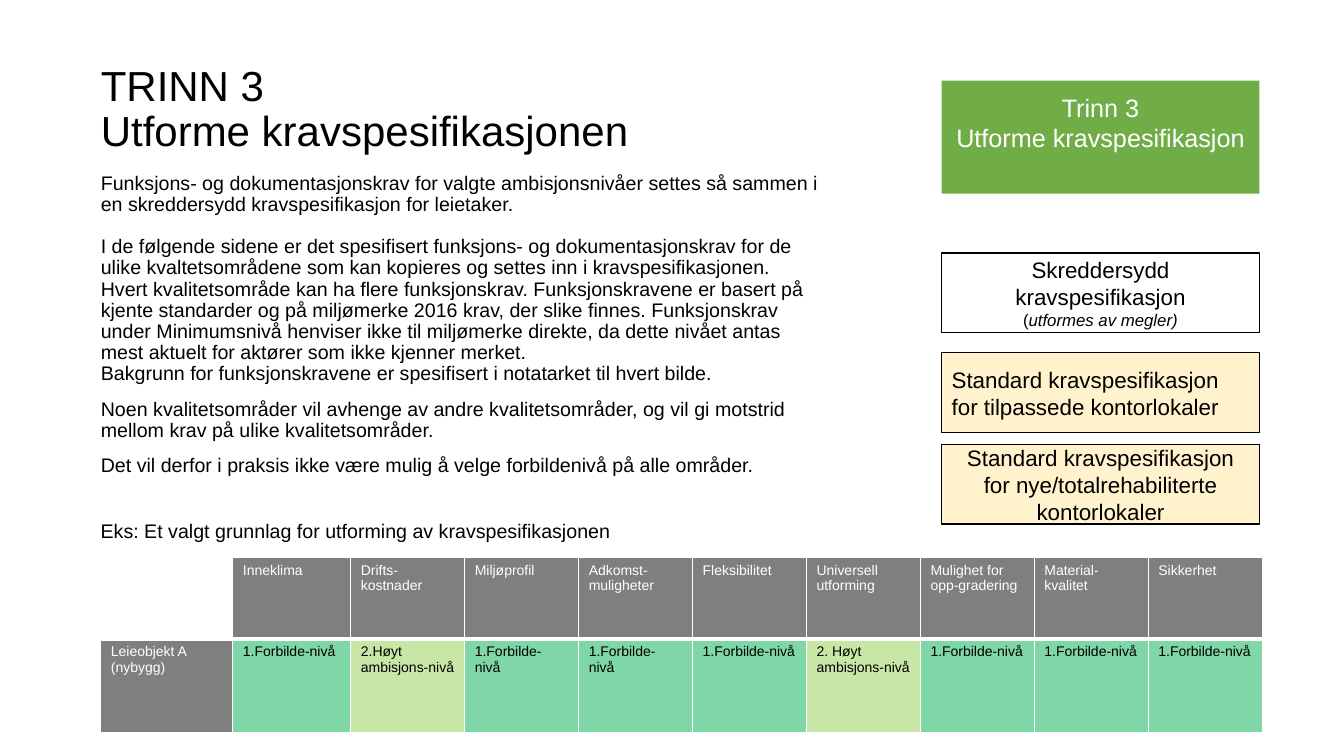
"""Build the slide about step 3, shaping the requirement specification."""
import pptx
import pptx.dml.color
import pptx.enum.shapes
import pptx.enum.text
import pptx.oxml.ns
import pptx.util
from lxml import etree

Inches = pptx.util.Inches
Pt = pptx.util.Pt
RGBColor = pptx.dml.color.RGBColor
ANCHOR = pptx.enum.text.MSO_ANCHOR
ALIGN = pptx.enum.text.PP_ALIGN
qn = pptx.oxml.ns.qn

BLACK = RGBColor(0x00, 0x00, 0x00)
WHITE = RGBColor(0xFF, 0xFF, 0xFF)
STEP_GREEN = RGBColor(0x70, 0xAD, 0x47)
CREAM = RGBColor(0xFF, 0xF2, 0xCC)
BEST_GREEN = RGBColor(0x00, 0xB1, 0x51)
HIGH_GREEN = RGBColor(0x92, 0xD0, 0x50)

BOX_LEFT, BOX_WIDTH, BOX_HEIGHT = 9.34, 3.15, 0.79

TITLE = ["TRINN 3", "Utforme kravspesifikasjonen"]
BODY = [
    ("Funksjons- og dokumentasjonskrav for valgte ambisjonsnivåer settes så sammen i "
     "en skreddersydd kravspesifikasjon for leietaker.", 0),
    ("I de følgende sidene er det spesifisert funksjons- og dokumentasjonskrav for de "
     "ulike kvaltetsområdene som kan kopieres og settes inn i kravspesifikasjonen. "
     "Hvert kvalitetsområde kan ha flere funksjonskrav. Funksjonskravene er basert på "
     "kjente standarder og på miljømerke 2016 krav, der slike finnes. Funksjonskrav "
     "under Minimumsnivå henviser ikke til miljømerke direkte, da dette nivået antas "
     "mest aktuelt for aktører som ikke kjenner merket.", 15),
    ("Bakgrunn for funksjonskravene er spesifisert i notatarket til hvert bilde.", 0),
    ("Noen kvalitetsområder vil avhenge av andre kvalitetsområder, og vil gi motstrid "
     "mellom krav på ulike kvalitetsområder.", 10),
    ("Det vil derfor i praksis ikke være mulig å velge forbildenivå på alle områder.", 10),
]
EXAMPLE = "Eks: Et valgt grunnlag for utforming av kravspesifikasjonen"
AREAS = [
    ("Inneklima", "1.Forbilde-nivå"),
    ("Drifts-kostnader", "2.Høyt ambisjons-nivå"),
    ("Miljøprofil", "1.Forbilde- nivå"),
    ("Adkomst-muligheter", "1.Forbilde- nivå"),
    ("Fleksibilitet", "1.Forbilde-nivå"),
    ("Universell utforming", "2. Høyt ambisjons-nivå"),
    ("Mulighet for opp-gradering", "1.Forbilde-nivå"),
    ("Material-kvalitet", "1.Forbilde-nivå"),
    ("Sikkerhet", "1.Forbilde-nivå"),
]


def apply_format(target, values):
    """Set every attribute named in values on target."""
    for name, value in values.items():
        setattr(target, name, value)


def add_span(para, text, size, color=BLACK, italic=False):
    """Append one formatted run to a paragraph."""
    span = para.add_run()
    span.text = text
    apply_format(span.font, {"name": "Arial", "size": Pt(size), "bold": False, "italic": italic})
    span.font.color.rgb = color


def add_para(frame, text, size, color=BLACK, **values):
    """Fill the first empty paragraph or append another one."""
    first = frame.paragraphs[0]
    para = frame.add_paragraph() if first.runs else first
    apply_format(para, values)
    add_span(para, text, size, color)
    return para


def place(shape, left, top, width, height):
    """Move and size a shape in inches."""
    apply_format(shape, {"left": Inches(left), "top": Inches(top),
                         "width": Inches(width), "height": Inches(height)})


def fill_title(page):
    """Write the heading in the title placeholder."""
    title = page.shapes.title
    place(title, 0.9, 0.37, 11.5, 1.45)
    apply_format(title.text_frame, {"vertical_anchor": ANCHOR.MIDDLE, "word_wrap": True,
                                    "auto_size": pptx.enum.text.MSO_AUTO_SIZE.NONE})
    for line in TITLE:
        add_para(title.text_frame, line, 30, alignment=ALIGN.LEFT, line_spacing=0.9,
                 space_before=Pt(0))


def fill_body(page):
    """Write the unbulleted explanation in the body placeholder."""
    body = page.placeholders[1]
    place(body, 0.9, 1.67, 7.36, 3.12)
    apply_format(body.text_frame, {"word_wrap": True,
                                   "auto_size": pptx.enum.text.MSO_AUTO_SIZE.NONE})
    for text, gap in BODY:
        para = add_para(body.text_frame, text, 14, line_spacing=0.9, space_before=Pt(gap))
        properties = para._p.get_or_add_pPr()
        properties.set("marL", "0")
        properties.set("indent", "0")
        etree.SubElement(properties, qn("a:buNone"))


def add_example(page):
    """Add the line that introduces the table."""
    box = page.shapes.add_textbox(Inches(0.9), Inches(5.1), Inches(8.26), Inches(0.57))
    box.text_frame.word_wrap = True
    add_para(box.text_frame, EXAMPLE, 14)


def add_box(page, top, lines, fill, height=BOX_HEIGHT, size=16, color=BLACK,
            align=ALIGN.CENTER, outlined=True):
    """Add one rectangle of the right column."""
    box = page.shapes.add_shape(pptx.enum.shapes.MSO_SHAPE.RECTANGLE, Inches(BOX_LEFT),
                                Inches(top), Inches(BOX_WIDTH), Inches(height))
    box.shadow.inherit = False
    box.fill.solid()
    box.fill.fore_color.rgb = fill
    if outlined:
        box.line.color.rgb = BLACK
        box.line.width = Pt(1)
    else:
        box.line.fill.background()
    apply_format(box.text_frame, {"word_wrap": True, "vertical_anchor": ANCHOR.MIDDLE})
    for line in lines:
        add_para(box.text_frame, line, size, color, alignment=align)
    return box


def add_boxes(page):
    """Add the step box and the three specification boxes."""
    step = add_box(page, 0.8, ["Trinn 3", "Utforme kravspesifikasjon"], STEP_GREEN,
                   height=1.12, size=18, color=WHITE, outlined=False)
    step.text_frame.margin_bottom = Inches(0.34)
    tailored = add_box(page, 2.51, ["Skreddersydd kravspesifikasjon"], WHITE)
    note = add_para(tailored.text_frame, "(", 12, alignment=ALIGN.CENTER)
    add_span(note, "utformes av megler)", 12, italic=True)
    add_box(page, 3.5, ["Standard kravspesifikasjon", "for tilpassede kontorlokaler"],
            CREAM, align=ALIGN.LEFT)
    add_box(page, 4.41, ["Standard kravspesifikasjon",
                         "for nye/totalrehabiliterte kontorlokaler"], CREAM)


def style_cell(cell, fill, bottom_width):
    """Give a cell white borders and a half transparent fill."""
    properties = cell._tc.get_or_add_tcPr()
    for side, width in {"L": 1, "R": 1, "T": 1, "B": bottom_width}.items():
        border = etree.SubElement(properties, qn(f"a:ln{side}"), w=str(Pt(width)))
        paint = etree.SubElement(border, qn("a:solidFill"))
        etree.SubElement(paint, qn("a:srgbClr"), val=str(WHITE))
    cell.fill.solid()
    cell.fill.fore_color.rgb = fill
    color = properties.find(qn("a:solidFill")).find(qn("a:srgbClr"))
    etree.SubElement(color, qn("a:alpha"), val="50000")


def fill_cell(cell, lines, fill, color, bottom_width=1):
    """Style a table cell and write its lines."""
    style_cell(cell, fill, bottom_width)
    for line in lines:
        add_para(cell.text_frame, line, 10, color)


def add_level_table(page):
    """Add the table of chosen ambition levels."""
    widths = [1.31, 1.17] + [1.13] * (len(AREAS) - 1)
    table = page.shapes.add_table(2, len(widths), Inches(1), Inches(5.53),
                                  Inches(sum(widths)), Inches(1.74)).table
    apply_format(table, {"first_row": False, "horz_banding": False})
    for column, width in zip(table.columns, widths):
        column.width = Inches(width)
    for row, height in zip(table.rows, [0.81, 0.93]):
        row.height = Inches(height)
    fill_cell(table.cell(0, 0), [], WHITE, BLACK, 3)
    fill_cell(table.cell(1, 0), ["Leieobjekt A", "(nybygg)"], BLACK, WHITE)
    for index, (area, level) in enumerate(AREAS, 1):
        fill_cell(table.cell(0, index), [area], BLACK, WHITE, 3)
        level_fill = BEST_GREEN if level.startswith("1") else HIGH_GREEN
        fill_cell(table.cell(1, index), [level], level_fill, BLACK)


def main():
    """Build and save the deck."""
    deck = pptx.Presentation()
    apply_format(deck, {"slide_width": Inches(13.33), "slide_height": Inches(7.5)})
    page = deck.slides.add_slide(deck.slide_layouts[1])
    fill_title(page)
    fill_body(page)
    add_example(page)
    add_level_table(page)
    add_boxes(page)
    deck.save("out.pptx")


if __name__ == "__main__":
    main()
